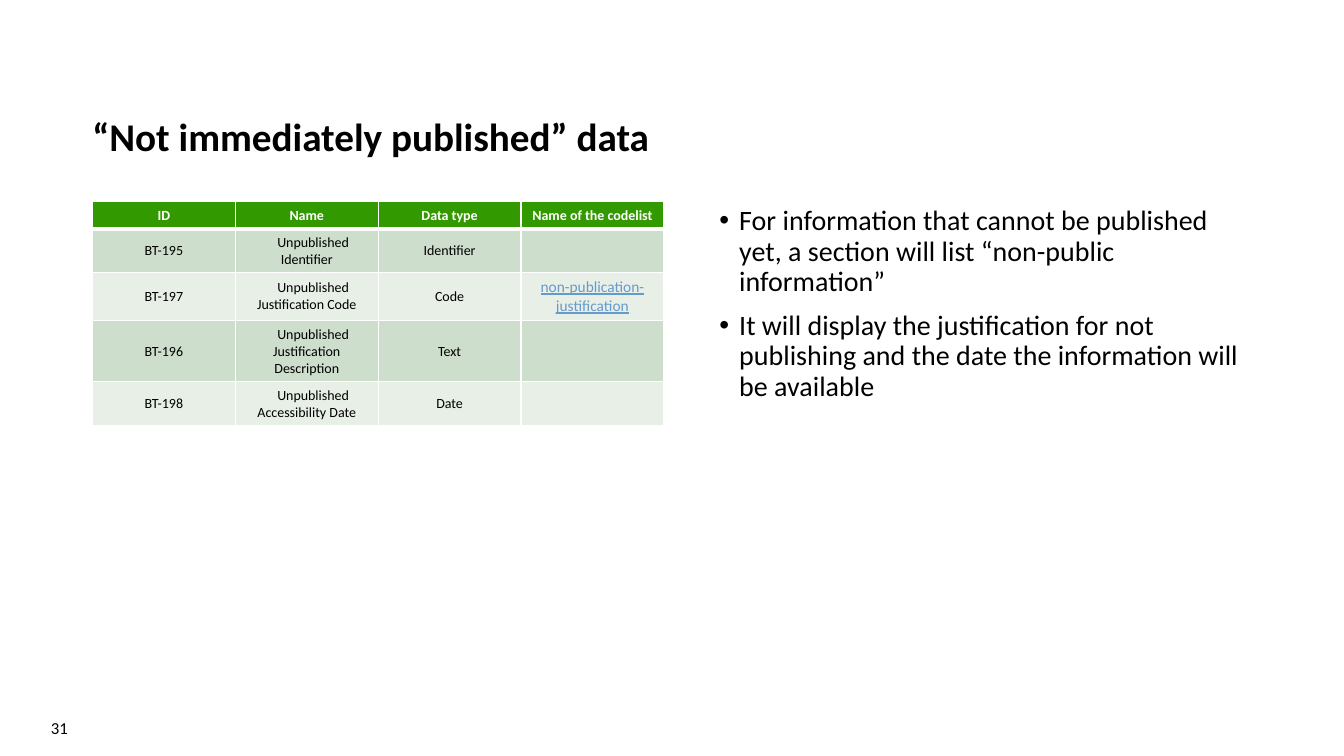
from dataclasses import dataclass

from lxml import etree
from pptx import Presentation
from pptx import util as u
from pptx.dml import color
from pptx.enum import text
from pptx.oxml import ns


@dataclass(frozen=True)
class Theme:
    """Colours, font and type sizes of the slide."""
    font: str = "Calibri"
    ink: str = "000000"
    white: str = "FFFFFF"
    header: str = "339900"
    bands: tuple = ("CEDECC", "E8EFE7")
    link: str = "6699CC"
    title_size: int = 28
    body_size: int = 20
    number_size: int = 12
    link_size: int = 11
    cell_size: int = 10


THEME = Theme()
LINK_TEXT = "non-publication-justification"
TABLE_ROWS = [
    ("ID", "Name", "Data type", "Name of the codelist"),
    ("BT-195", "Unpublished Identifier", "Identifier", ""),
    ("BT-197", "Unpublished Justification Code", "Code", LINK_TEXT),
    ("BT-196", "Unpublished Justification Description", "Text", ""),
    ("BT-198", "Unpublished Accessibility Date", "Date", ""),
]
ROW_HEIGHTS = (0.69, 1.1, 1.21, 1.54, 1.11)
BULLETS = [
    "For information that cannot be published yet, a section will list “non-public information”",
    "It will display the justification for not publishing and the date the information will be available",
]


def format_runs(paragraph, size, ink=THEME.ink, bold=False, underline=False):
    """Apply the theme font to every run of a paragraph."""
    for run in paragraph.runs:
        run.font.name = THEME.font
        run.font.size = u.Pt(size)
        run.font.bold = bold
        run.font.underline = underline
        run.font.color.rgb = color.RGBColor.from_string(ink)


def add_text(slide, box, lines, size, margins, anchor, bold=False):
    """Add a wrapping text box and return its paragraphs."""
    shape = slide.shapes.add_textbox(*map(u.Cm, box))
    frame = shape.text_frame
    frame.word_wrap = True
    frame.vertical_anchor = anchor
    frame.margin_left, frame.margin_top, frame.margin_right, frame.margin_bottom = map(u.Cm, margins)
    frame.text = "\n".join(lines)
    for paragraph in frame.paragraphs:
        format_runs(paragraph, size, bold=bold)
    return frame.paragraphs


def indent(paragraph, left, first):
    """Set the left margin and first-line indent of a paragraph."""
    properties = paragraph._p.get_or_add_pPr()
    properties.set("marL", str(u.Cm(left)))
    properties.set("indent", str(u.Cm(first)))
    return properties


def add_bullets(slide, box, lines):
    """Add the bulleted body text."""
    paragraphs = add_text(slide, box, lines, THEME.body_size, (0, 0.13, 0.25, 0.13), text.MSO_ANCHOR.TOP)
    for position, paragraph in enumerate(paragraphs):
        properties = indent(paragraph, 0.5, -0.5)
        etree.SubElement(properties, ns.qn("a:buFont"), typeface="Arial")
        etree.SubElement(properties, ns.qn("a:buChar"), char="•")
        paragraph.line_spacing = 0.9
        paragraph.space_before = u.Pt(10 if position else 0)


def add_borders(cell, bottom):
    """Draw white borders round a cell, with the given bottom width."""
    properties = cell._tc.get_or_add_tcPr()
    for side, width in (("L", 1), ("R", 1), ("T", 1), ("B", bottom)):
        line = etree.SubElement(properties, ns.qn(f"a:ln{side}"), w=str(u.Pt(width)))
        fill = etree.SubElement(line, ns.qn("a:solidFill"))
        etree.SubElement(fill, ns.qn("a:srgbClr"), val=THEME.white)


def fill_cell(cell, content, row, column):
    """Write and format one cell of the table."""
    is_header = row == 0
    is_link = content == LINK_TEXT
    add_borders(cell, 3 if is_header else 1)
    cell.fill.solid()
    background = THEME.header if is_header else THEME.bands[(row - 1) % 2]
    cell.fill.fore_color.rgb = color.RGBColor.from_string(background)
    cell.vertical_anchor = text.MSO_ANCHOR.MIDDLE
    cell.text_frame.text = content
    paragraph = cell.text_frame.paragraphs[0]
    paragraph.alignment = text.PP_ALIGN.CENTER
    if column == 1 and not is_header:
        indent(paragraph, 0, 0.32)
    ink = THEME.white if is_header else THEME.link if is_link else THEME.ink
    size = THEME.link_size if is_link else THEME.cell_size
    format_runs(paragraph, size, ink, is_header, is_link)


def add_data_table(slide, box, rows, heights):
    """Add the table of business terms."""
    table = slide.shapes.add_table(len(rows), len(rows[0]), *map(u.Cm, box)).table
    for row, (contents, height) in enumerate(zip(rows, heights)):
        table.rows[row].height = u.Cm(height)
        for column, content in enumerate(contents):
            fill_cell(table.cell(row, column), content, row, column)


def main():
    """Build and save the slide."""
    presentation = Presentation()
    presentation.slide_width, presentation.slide_height = u.Cm(33.87), u.Cm(19.05)
    slide = presentation.slides.add_slide(presentation.slide_layouts[6])
    title = add_text(slide, (2.33, 0.36, 29.16, 3.68), ["“Not immediately published” data"],
                     THEME.title_size, (0, 0.13, 0, 0), text.MSO_ANCHOR.BOTTOM, bold=True)
    title[0].line_spacing = 0.9
    add_data_table(slide, (2.33, 5.08, 14.4, sum(ROW_HEIGHTS)), TABLE_ROWS, ROW_HEIGHTS)
    add_bullets(slide, (18.13, 5.08, 13.41, 12.09), BULLETS)
    number = add_text(slide, (0, 17.83, 1.96, 1.02), ["31"], THEME.number_size,
                      (0.25, 0.13, 0.25, 0.13), text.MSO_ANCHOR.MIDDLE)
    number[0].alignment = text.PP_ALIGN.RIGHT
    presentation.save("out.pptx")


if __name__ == "__main__":
    main()
